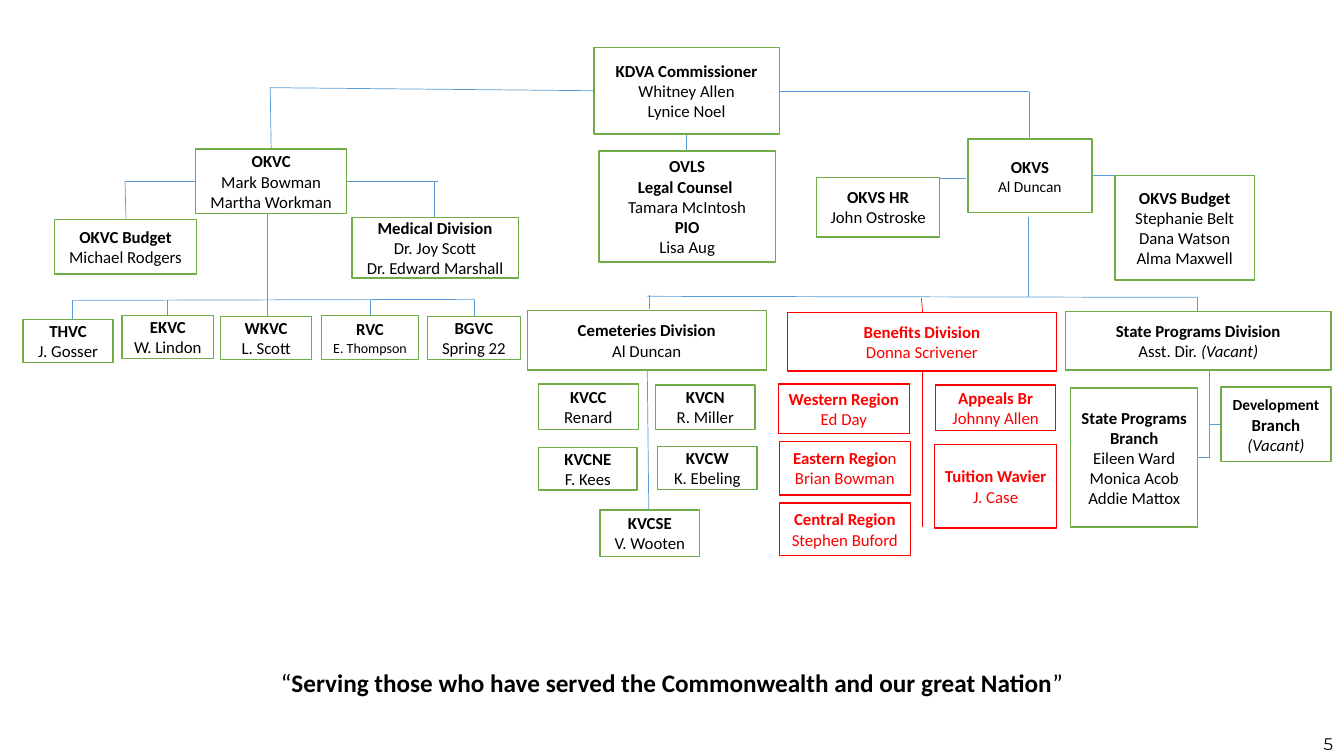
from dataclasses import dataclass

from lxml import etree
from pptx import Presentation
from pptx.dml.color import RGBColor
from pptx.enum.shapes import MSO_CONNECTOR, MSO_SHAPE
from pptx.enum.text import MSO_ANCHOR, PP_ALIGN
from pptx.oxml.ns import qn
from pptx.util import Inches, Pt

RECT = MSO_SHAPE.RECTANGLE
STRAIGHT = MSO_CONNECTOR.STRAIGHT
TOP, MIDDLE = MSO_ANCHOR.TOP, MSO_ANCHOR.MIDDLE
CENTER, RIGHT = PP_ALIGN.CENTER, PP_ALIGN.RIGHT
BLANK_LAYOUT = 6


@dataclass(frozen=True)
class Theme:
    font: str = "Calibri"
    number_font: str = "Montserrat"
    text: RGBColor = RGBColor(0, 0, 0)
    paper: RGBColor = RGBColor(0xFF, 0xFF, 0xFF)
    green: RGBColor = RGBColor(0x70, 0xAD, 0x47)
    red: RGBColor = RGBColor(0xFF, 0, 0)
    blue: RGBColor = RGBColor(0x5B, 0x9B, 0xD5)
    body: int = 12
    small: int = 11
    tiny: int = 10
    motto: int = 18
    border: float = 1
    link: float = 0.5


THEME = Theme()


@dataclass(frozen=True)
class Run:
    text: str
    bold: bool = False
    italic: bool = False
    size: int = THEME.body


class OrgChart:
    def __init__(self, slide, theme):
        self.shapes = slide.shapes
        self.theme = theme

    def add_lines(self, tf, lines, color, align=CENTER, font=None):
        """Fill a frame; a plain string is bold on the first line only."""
        for i, line in enumerate(lines):
            p = tf.paragraphs[0] if i == 0 else tf.add_paragraph()
            p.alignment = align
            runs = [Run(line, bold=i == 0)] if isinstance(line, str) else line
            for run in runs:
                r = p.add_run()
                r.text = run.text
                r.font.name = font or self.theme.font
                r.font.size = Pt(run.size)
                r.font.bold = run.bold
                r.font.italic = run.italic
                r.font.color.rgb = color

    def box(self, place, lines, border, color, filled):
        sp = self.shapes.add_shape(RECT, *map(Inches, place))
        sp.shadow.inherit = False
        if filled:
            sp.fill.solid()
            sp.fill.fore_color.rgb = self.theme.paper
        else:
            sp.fill.background()
        sp.line.color.rgb = border
        sp.line.width = Pt(self.theme.border)
        tf = sp.text_frame
        tf.word_wrap = True
        tf.vertical_anchor = MIDDLE
        tf.margin_left = tf.margin_right = Inches(0.05)
        tf.margin_top = tf.margin_bottom = 0
        self.add_lines(tf, lines, color)

    def route(self, points, color):
        """Join consecutive points with straight connectors."""
        for start, end in zip(points, points[1:]):
            line = self.shapes.add_connector(STRAIGHT, *map(Inches, start + end))
            line.line.color.rgb = color
            line.line.width = Pt(self.theme.link)
            etree.SubElement(line._element.spPr, qn("a:effectLst"))

    def label(self, place, runs, align, anchor, font=None):
        tf = self.shapes.add_textbox(*map(Inches, place)).text_frame
        tf.word_wrap = True
        tf.vertical_anchor = anchor
        self.add_lines(tf, [runs], self.theme.text, align, font)


OFFICES = [
    ((5.89, 0.47, 1.84, 0.86), ["KDVA Commissioner", "Whitney Allen", "Lynice Noel"]),
    ((1.94, 1.48, 1.5, 0.64), ["OKVC", "Mark Bowman", "Martha Workman"]),
    ((8.1, 1.76, 1.22, 0.59), ["OKVS HR", "John Ostroske"]),
    ((0.23, 3.17, 0.89, 0.43), ["THVC", "J. Gosser"]),
    ((1.21, 3.13, 0.91, 0.43), ["EKVC", "W. Lindon"]),
    ((2.19, 3.14, 0.9, 0.43), ["WKVC", "L. Scott"]),
    ((3.19, 3.13, 0.96, 0.44), ["RVC", [Run("E. Thompson", size=THEME.tiny)]]),
    ((5.34, 3.81, 0.99, 0.45), ["KVCC", "Renard"]),
    ((6.5, 3.82, 0.99, 0.44), ["KVCN", "R. Miller"]),
    ((5.34, 4.44, 0.98, 0.42), ["KVCNE", "F. Kees"]),
    ((6.52, 4.43, 0.99, 0.43), ["KVCW", "K. Ebeling"]),
    ((5.95, 5.06, 0.99, 0.46), ["KVCSE", "V. Wooten"]),
]
DIVISIONS = [
    ((5.94, 1.5, 1.75, 1.1), ["OVLS", [Run("Legal Counsel ", bold=True)], "Tamara McIntosh",
                              [Run("PIO", bold=True)], "Lisa Aug"]),
    ((0.54, 2.18, 1.41, 0.54), ["OKVC Budget", "Michael Rodgers"]),
    ((3.49, 2.16, 1.65, 0.6), ["Medical Division", "Dr. Joy Scott", "Dr. Edward Marshall"]),
    ((4.24, 3.14, 0.92, 0.43), ["BGVC", "Spring 22"]),
    ((9.6, 1.38, 1.23, 0.73), ["OKVS", [Run("Al Duncan", size=THEME.small)]]),
    ((11.06, 1.74, 1.38, 1.04), ["OKVS Budget", "Stephanie Belt", "Dana Watson",
                                 "Alma Maxwell"]),
    ((5.23, 3.08, 2.37, 0.59), ["Cemeteries Division", "Al Duncan"]),
    ((10.57, 3.09, 2.63, 0.58), ["State Programs Division",
                                 [Run("Asst. Dir. "), Run("(Vacant)", italic=True)]]),
    ((10.62, 3.85, 1.26, 1.38), ["State Programs Branch", "Eileen Ward", "Monica Acob",
                                 "Addie Mattox"]),
    ((12.11, 3.84, 1.09, 0.74), [[Run("Development", bold=True, size=THEME.small),
                                  Run(" Branch", bold=True)],
                                 [Run("(Vacant)", italic=True)]]),
]
BENEFITS = [
    ((7.81, 3.1, 2.67, 0.58), ["Benefits Division", "Donna Scrivener"]),
    ((7.72, 3.81, 1.3, 0.49), ["Western Region", "Ed Day"]),
    ((7.73, 4.38, 1.3, 0.53), [[Run("Eastern Regio", bold=True), Run("n")], "Brian Bowman"]),
    ((7.73, 4.99, 1.3, 0.52), ["Central Region", "Stephen Buford"]),
    ((9.28, 3.82, 1.19, 0.45), ["Appeals Br", "Johnny Allen"]),
    ((9.27, 4.41, 1.21, 0.83), ["Tuition Wavier", "J. Case"]),
]

CENTER_BUS = 2.98
CENTER_DROPS = [(0.72, 3.17), (1.66, 3.13), (2.65, 3.14), (3.67, 3.13), (4.7, 3.14)]
BLUE_ROUTES = [
    [(5.88, 0.9), (2.68, 0.87), (2.69, 1.48)],
    [(7.72, 0.91), (10.21, 0.91), (10.21, 1.38)],
    [(6.81, 1.34), (6.81, 1.5)],
    [(1.94, 1.8), (1.24, 1.8), (1.25, 2.18)],
    [(3.44, 1.8), (4.34, 1.8)],
    [(4.31, 1.8), (4.31, 2.16)],
    [(2.65, 2.12), (2.65, CENTER_BUS)],
    [(0.72, CENTER_BUS), (4.71, 2.97)],
    [(9.31, 1.77), (9.58, 1.77)],
    [(10.83, 1.74), (11.07, 1.74)],
    [(10.2, 2.15), (10.2, 2.95)],
    [(6.42, 2.94), (11.88, 2.95), (11.88, 3.09)],
    [(6.44, 2.93), (6.44, 3.07)],
    [(6.42, 3.67), (6.44, 5.52)],
    [(11.99, 3.68), (11.99, 4.54), (11.88, 4.54)],
    [(11.99, 4.21), (12.11, 4.21)],
] + [[(x, CENTER_BUS), (x, top)] for x, top in CENTER_DROPS]
RED_ROUTES = [[(9.14, 2.96), (9.15, 3.1)], [(9.15, 3.68), (9.15, 5.23)]]


def main():
    prs = Presentation()
    prs.slide_width, prs.slide_height = Inches(13.33), Inches(7.5)
    s = prs.slides.add_slide(prs.slide_layouts[BLANK_LAYOUT])
    chart = OrgChart(s, THEME)

    for routes, color in ((BLUE_ROUTES, THEME.blue), (RED_ROUTES, THEME.red)):
        for points in routes:
            chart.route(points, color)

    for boxes, border, color, filled in (
        (OFFICES, THEME.green, THEME.text, True),
        (DIVISIONS, THEME.green, THEME.text, False),
        (BENEFITS, THEME.red, THEME.red, False),
    ):
        for place, lines in boxes:
            chart.box(place, lines, border, color, filled)

    motto = "Serving those who have served the Commonwealth and our great Nation"
    chart.label((0, 6.57, 13.33, 0.4),
                [Run("“", size=THEME.motto), Run(motto, bold=True, size=THEME.motto),
                 Run("”", size=THEME.motto)], CENTER, TOP)
    chart.label((10.32, 7.18, 3, 0.4), [Run("5")], RIGHT, MIDDLE, THEME.number_font)
    prs.save("out.pptx")


if __name__ == "__main__":
    main()
